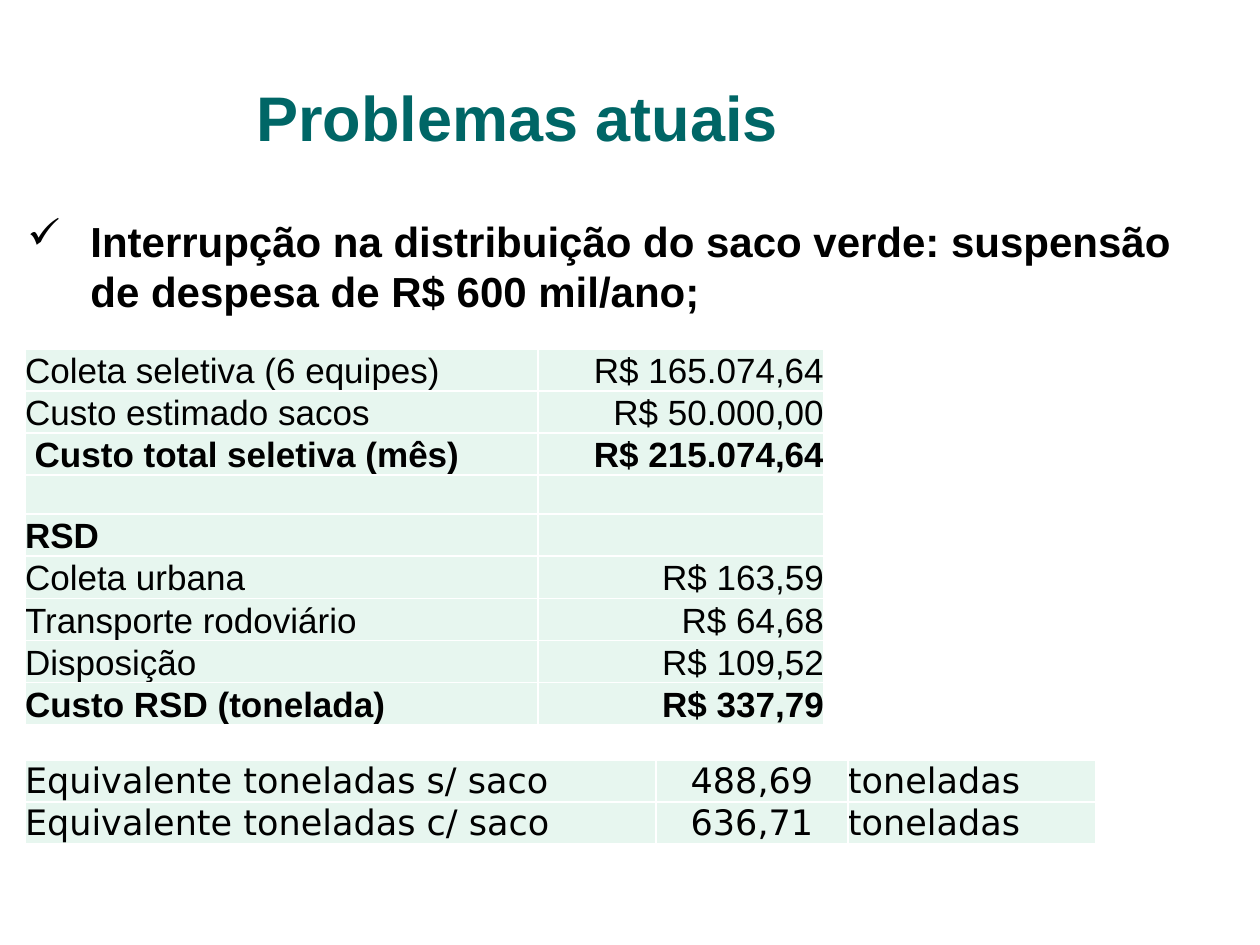
from lxml.etree import SubElement
from pptx import Presentation
from pptx.dml.color import RGBColor
from pptx.enum.text import MSO_ANCHOR, PP_ALIGN
from pptx.oxml.ns import qn
from pptx.util import Pt

EMU_PER_PX = 914400 / 126
TEAL = RGBColor(0x00, 0x66, 0x66)
BLACK = RGBColor(0x00, 0x00, 0x00)
MINT = RGBColor(0xE7, 0xF6, 0xEF)
WHITE = RGBColor(0xFF, 0xFF, 0xFF)
LEFT, CENTER, RIGHT = PP_ALIGN.LEFT, PP_ALIGN.CENTER, PP_ALIGN.RIGHT

COSTS = [
    ("Coleta seletiva (6 equipes)", "R$ 165.074,64"),
    ("Custo estimado sacos", "R$ 50.000,00"),
    ("\u00a0Custo total seletiva (mês)", "R$ 215.074,64"),
    ("", ""),
    ("RSD", ""),
    ("Coleta urbana", "R$ 163,59"),
    ("Transporte rodoviário", "R$ 64,68"),
    ("Disposição", "R$ 109,52"),
    ("Custo RSD (tonelada)", "R$ 337,79"),
]
BOLD_COST_ROWS = {2, 4, 8}
EQUIVALENTS = [
    ("Equivalente toneladas s/ saco", "488,69", "toneladas"),
    ("Equivalente toneladas c/ saco", "636,71", "toneladas"),
]


def px(length):
    return round(length * EMU_PER_PX)


def write(frame, text, size=20, font="Arial", color=BLACK, bold=False, align=LEFT):
    paragraph = frame.paragraphs[0]
    paragraph.alignment = align
    run = paragraph.add_run()
    run.text = text
    run.font.size = Pt(size)
    run.font.name = font
    run.font.color.rgb = color
    run.font.bold = bold
    return paragraph


def add_frame(slide, box, anchor):
    frame = slide.shapes.add_textbox(*map(px, box)).text_frame
    frame.word_wrap = True
    frame.vertical_anchor = anchor
    return frame


def add_title(slide, box):
    frame = add_frame(slide, box, MSO_ANCHOR.BOTTOM)
    write(frame, "Problemas atuais", size=36, color=TEAL, bold=True)


def add_problem(slide, box):
    frame = add_frame(slide, box, MSO_ANCHOR.TOP)
    problem = write(
        frame,
        "Interrupção na distribuição do saco verde: suspensão de despesa de R$ 600 mil/ano;",
        size=24,
        bold=True,
    )
    properties = problem._p.get_or_add_pPr()
    properties.set("marL", str(px(63)))
    properties.set("indent", str(px(-63)))
    bullet_color = SubElement(properties, qn("a:buClr"))
    SubElement(bullet_color, qn("a:srgbClr")).set("val", str(BLACK))
    SubElement(properties, qn("a:buChar")).set("char", "✓")


def style_cell(cell):
    cell.margin_left = cell.margin_right = cell.margin_top = cell.margin_bottom = 0
    cell.vertical_anchor = MSO_ANCHOR.BOTTOM
    properties = cell._tc.get_or_add_tcPr()
    for side in ("a:lnL", "a:lnR", "a:lnT", "a:lnB"):
        border = SubElement(properties, qn(side), w=str(Pt(1)))
        fill = SubElement(border, qn("a:solidFill"))
        SubElement(fill, qn("a:srgbClr")).set("val", str(WHITE))
    cell.fill.solid()
    cell.fill.fore_color.rgb = MINT


def add_grid(slide, box, rows, widths, aligns, font, bold_rows=()):
    table = slide.shapes.add_table(len(rows), len(widths), *map(px, box)).table
    table.first_row = table.horz_banding = False
    for column, width in zip(table.columns, widths):
        column.width = px(width)
    for row in table.rows:
        row.height = px(box[3] / len(rows))
    for r, values in enumerate(rows):
        for c, value in enumerate(values):
            cell = table.cell(r, c)
            style_cell(cell)
            if value:
                write(cell.text_frame, value, font=font, bold=r in bold_rows, align=aligns[c])


def build_slide(slide):
    add_title(slide, (244, 66, 1007, 94))
    add_problem(slide, (15, 209, 1176, 140))
    add_grid(slide, (25, 349, 799, 351), COSTS, (513, 286), (LEFT, RIGHT), "Arial", BOLD_COST_ROWS)
    add_grid(slide, (25, 760, 1071, 80), EQUIVALENTS, (631, 192, 248), (LEFT, CENTER, LEFT), "DejaVu Sans")


def main():
    presentation = Presentation()
    presentation.slide_width = px(1260)
    presentation.slide_height = px(945)
    build_slide(presentation.slides.add_slide(presentation.slide_layouts[6]))
    presentation.save("out.pptx")


if __name__ == "__main__":
    main()
